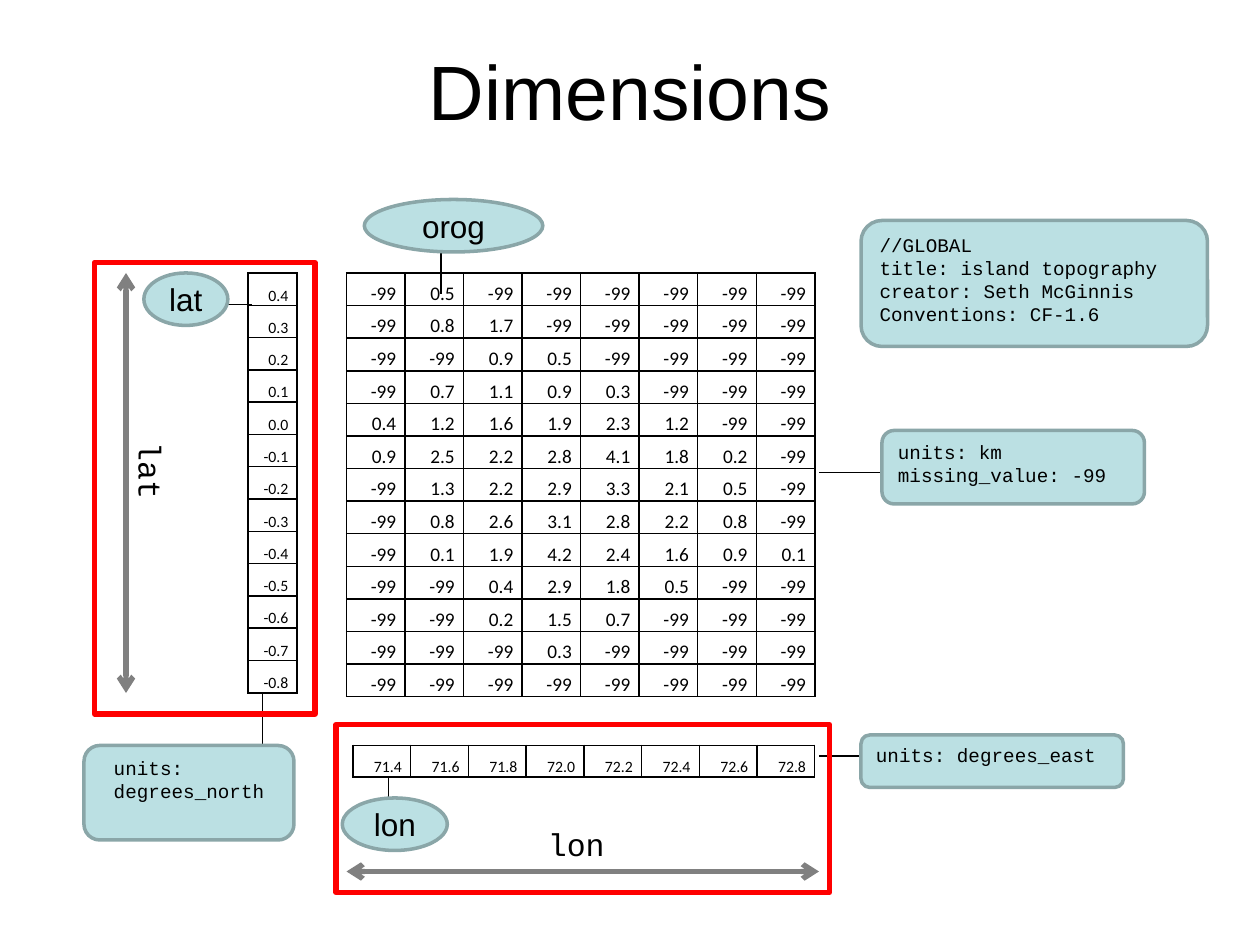
from lxml import etree
from pptx import Presentation
from pptx.dml.color import RGBColor
from pptx.enum.shapes import MSO_CONNECTOR, MSO_SHAPE
from pptx.enum.text import MSO_ANCHOR, PP_ALIGN
from pptx.oxml.ns import qn
from pptx.util import Inches, Pt

LEFT, CENTER, RIGHT = PP_ALIGN.LEFT, PP_ALIGN.CENTER, PP_ALIGN.RIGHT
TOP, MIDDLE, BOTTOM = MSO_ANCHOR.TOP, MSO_ANCHOR.MIDDLE, MSO_ANCHOR.BOTTOM
RECT, ROUND, OVAL = MSO_SHAPE.RECTANGLE, MSO_SHAPE.ROUNDED_RECTANGLE, MSO_SHAPE.OVAL
BLACK = RGBColor(0, 0, 0)
GRAY = RGBColor(0x80, 0x80, 0x80)
RED = RGBColor(0xFF, 0, 0)
TEAL = RGBColor(0xBB, 0xE0, 0xE3)
EDGE = RGBColor(0x8A, 0xA6, 0xA8)
SANS, MONO, CELL = "Arial", "Courier New", "Calibri"

# All places and sizes are in grid units: the slide is 120 by 90.
COLS, ROWS = 120, 90

OROG = [line.split() for line in """
-99 0.5 -99 -99 -99 -99 -99 -99
-99 0.8 1.7 -99 -99 -99 -99 -99
-99 -99 0.9 0.5 -99 -99 -99 -99
-99 0.7 1.1 0.9 0.3 -99 -99 -99
0.4 1.2 1.6 1.9 2.3 1.2 -99 -99
0.9 2.5 2.2 2.8 4.1 1.8 0.2 -99
-99 1.3 2.2 2.9 3.3 2.1 0.5 -99
-99 0.8 2.6 3.1 2.8 2.2 0.8 -99
-99 0.1 1.9 4.2 2.4 1.6 0.9 0.1
-99 -99 0.4 2.9 1.8 0.5 -99 -99
-99 -99 0.2 1.5 0.7 -99 -99 -99
-99 -99 -99 0.3 -99 -99 -99 -99
-99 -99 -99 -99 -99 -99 -99 -99
""".strip().splitlines()]
LON = [[f"{71.4 + 0.2 * i:.1f}" for i in range(8)]]
LAT = [[f"{(4 - i) / 10:.1f}"] for i in range(13)]

TABLES = [  # values, place, text size
    (OROG, (33, 26, 44.6, 40.4), 11),
    (LON, (33.6, 71, 44, 3), 9),
    (LAT, (23.6, 26, 4.7, 40), 9),
]
LINKS = [  # from, to
    (18, 29, 24, 29), (37, 79, 37, 74), (42, 28, 42, 23),
    (78, 72, 84, 72), (78, 45, 84, 45), (25, 71, 25, 66),
]
NAMES = [
    ("orog", (34.7, 19, 17, 5)),
    ("lat", (13.7, 26, 8, 5)),
    ("lon", (32.6, 76, 10, 5)),
]
NOTES = [  # text, place, wraps
    ("units: km\vmissing_value: -99", (84, 41, 25, 7), False),
    ("units: degrees_east", (82, 70, 25, 5), False),
    ("units: degrees_north", (8, 71, 20, 9), True),
    ("//GLOBAL\ntitle: island topography\ncreator: Seth McGinnis\n"
     "Conventions: CF-1.6", (82, 21, 33, 12), False),
]
AXES = [(12, 26, 12, 66), (33, 83, 78, 83)]
LABELS = [("lat", (10.4, 42.6, 8, 4.8), 90), ("lon", (51, 78, 9, 5), 0)]
FRAMES = [(9, 25, 21, 43), (32, 69, 47, 16)]

deck = Presentation()
deck.slide_width, deck.slide_height = Inches(10), Inches(7.5)
slide = deck.slides.add_slide(deck.slide_layouts[6])
shapes = slide.shapes


def scale(place):
    """Turn x, y pairs of grid units into slide lengths."""
    unit = (deck.slide_width / COLS, deck.slide_height / ROWS)
    return [round(n * unit[i % 2]) for i, n in enumerate(place)]


def write(frame, text, size, font=SANS, align=LEFT, gap=None):
    frame.text = text
    for para in frame.paragraphs:
        para.alignment = align
        para.line_spacing = gap
        for run in para.runs:
            run.font.size = Pt(size)
            run.font.name = font
            run.font.color.rgb = BLACK


def add_line(place, color, width, arrows=False):
    line = shapes.add_connector(MSO_CONNECTOR.STRAIGHT, *scale(place))
    line.line.color.rgb = color
    line.line.width = Pt(width)
    props = line._element.spPr
    if arrows:
        for end in ("a:headEnd", "a:tailEnd"):
            etree.SubElement(props.find(qn("a:ln")), qn(end), type="arrow")
    etree.SubElement(props, qn("a:effectLst"))


def add_box(kind, place, edge, width, fill=None):
    box = shapes.add_shape(kind, *scale(place))
    box.shadow.inherit = False
    box.line.color.rgb = edge
    box.line.width = Pt(width)
    if fill is None:
        box.fill.background()
    else:
        box.fill.solid()
        box.fill.fore_color.rgb = fill
    return box


def add_label(text, place, size, turn=0, **form):
    box = shapes.add_textbox(*scale(place))
    box.rotation = turn
    box.text_frame.word_wrap = True
    write(box.text_frame, text, size, **form)


def add_border(cell):
    props = cell._tc.get_or_add_tcPr()
    for i, side in enumerate(("a:lnL", "a:lnR", "a:lnT", "a:lnB")):
        line = etree.Element(qn(side), w=str(Pt(1)))
        fill = etree.SubElement(line, qn("a:solidFill"))
        etree.SubElement(fill, qn("a:srgbClr"), val=str(BLACK))
        props.insert(i, line)


def add_grid(values, place, size):
    x, y, wide, high = scale(place)
    table = shapes.add_table(len(values), len(values[0]), x, y, wide, high).table
    table.first_row = table.horz_banding = False
    for col in table.columns:
        col.width = wide // len(values[0])
    for row, texts in zip(table.rows, values):
        row.height = high // len(values)
        for cell, text in zip(row.cells, texts):
            cell.fill.background()
            add_border(cell)
            cell.margin_left = cell.margin_right = Inches(0.07)
            cell.margin_top = cell.margin_bottom = 0
            cell.vertical_anchor = BOTTOM
            write(cell.text_frame, text, size, font=CELL, align=RIGHT, gap=1.15)


for link in LINKS:
    add_line(link, BLACK, 0.75)
for values, place, size in TABLES:
    add_grid(values, place, size)
for text, place in NAMES:
    frame = add_box(OVAL, place, EDGE, 2, TEAL).text_frame
    frame.word_wrap = False
    frame.vertical_anchor = MIDDLE
    write(frame, text, 18, align=CENTER)
add_label("Dimensions", (6, 3.6, 108, 15), 44, align=CENTER)
for text, place, wraps in NOTES:
    frame = add_box(ROUND, place, EDGE, 2, TEAL).text_frame
    frame.word_wrap = wraps
    frame.vertical_anchor = TOP
    if wraps:
        frame.margin_left = Inches(0.2)
    write(frame, text, 11, font=MONO)
for axis in AXES:
    add_line(axis, GRAY, 3, arrows=True)
for text, place, turn in LABELS:
    add_label(text, place, 18, turn, font=MONO)
for place in FRAMES:
    add_box(RECT, place, RED, 3)

deck.save("out.pptx")
